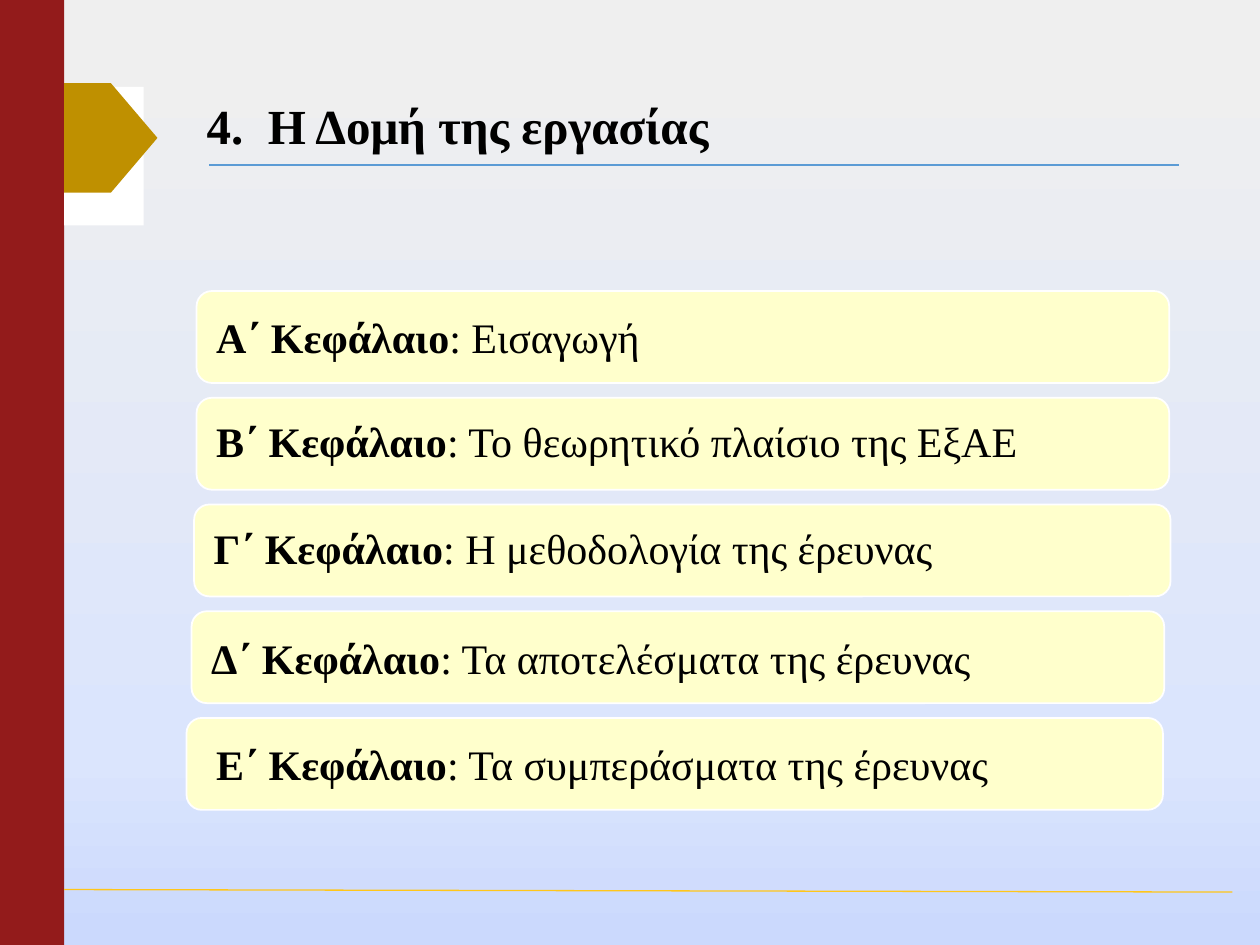
from copy import deepcopy
from dataclasses import dataclass

from pptx import Presentation
from pptx import util as u
from pptx.dml.color import RGBColor
from pptx.enum import shapes, text
from pptx.oxml import parse_xml
from pptx.oxml.ns import nsdecls, qn


@dataclass(frozen=True)
class Theme:
    font: str = "Times New Roman"
    title_size: int = 28
    body_size: int = 24
    ink: str = "000000"
    bar: str = "931B1B"
    arrow: str = "BF9000"
    white: str = "FFFFFF"
    card: str = "FFFFCC"
    title_rule: str = "5B9BD5"
    footer_rule: str = "FFC61A"
    backdrop: tuple = ((0.05, "EFEFEF"), (0.80, "DBE5FD"), (0.99, "CBD9FD"))


THEME = Theme()
WIDTH, HEIGHT = 10, 7.5
BAR_WIDTH = 0.51
CARD_TOP, CARD_PITCH, CARD_HEIGHT = 2.31, 0.847, 0.73

# Chapter, subject, left edge, width, tight line spacing, extra text indent
CHAPTERS = [
    ("Α΄ Κεφάλαιο", "Εισαγωγή", 1.56, 7.72, False, 0),
    ("Β΄ Κεφάλαιο", "Το θεωρητικό πλαίσιο της ΕξΑΕ", 1.56, 7.72, True, 0),
    ("Γ΄ Κεφάλαιο", "Η μεθοδολογία της έρευνας", 1.54, 7.75, True, 0),
    ("Δ΄ Κεφάλαιο", "Τα αποτελέσματα της έρευνας", 1.52, 7.72, False, 0),
    ("Ε΄ Κεφάλαιο", "Τα συμπεράσματα της έρευνας", 1.48, 7.75, False, 0.08),
]


def color(value):
    return RGBColor.from_string(value)


def inches(values):
    return [u.Inches(value) for value in values]


def style_font(font, size):
    font.name = THEME.font
    font.size = u.Pt(size)
    font.color.rgb = color(THEME.ink)


def add_block(slide, kind, box, fill, line=None):
    shape = slide.shapes.add_shape(kind, *inches(box))
    shape.shadow.inherit = False
    shape.fill.solid()
    shape.fill.fore_color.rgb = color(fill)
    if line:
        shape.line.color.rgb = color(line)
        shape.line.width = u.Pt(1)
    else:
        shape.line.fill.background()
    return shape


def add_rule(slide, ends, line):
    rule = slide.shapes.add_connector(shapes.MSO_CONNECTOR.STRAIGHT, *inches(ends))
    rule.line.color.rgb = color(line)
    rule.line.width = u.Pt(0.75)
    rule._element.spPr.append(parse_xml(f"<a:effectLst {nsdecls('a')}/>"))


def paint_background(slide):
    fill = slide.background.fill
    fill.gradient()
    fill.gradient_angle = 270
    # The default gradient has two stops; a third one is added
    stop_list = slide._element.find(".//" + qn("a:gsLst"))
    stop_list.append(deepcopy(stop_list[-1]))
    for stop, (position, value) in zip(fill.gradient_stops, THEME.backdrop):
        stop.position = position
        stop.color.rgb = color(value)


def add_frame(slide):
    kinds = shapes.MSO_SHAPE
    add_block(slide, kinds.RECTANGLE, (0, 0, BAR_WIDTH, HEIGHT), THEME.bar)
    add_rule(slide, (1.66, 1.31, 9.36, 1.31), THEME.title_rule)
    add_rule(slide, (BAR_WIDTH, 7.06, 9.78, 7.08), THEME.footer_rule)
    add_block(slide, kinds.RECTANGLE, (BAR_WIDTH, 0.69, 0.63, 1.1), THEME.white)
    add_block(slide, kinds.PENTAGON, (BAR_WIDTH, 0.66, 0.74, 0.87), THEME.arrow)


def set_title(slide, box, words):
    title = slide.shapes.title
    title.left, title.top, title.width, title.height = inches(box)
    frame = title.text_frame
    frame.text = words
    frame.vertical_anchor = text.MSO_ANCHOR.MIDDLE
    paragraph = frame.paragraphs[0]
    paragraph.alignment = text.PP_ALIGN.LEFT
    paragraph.line_spacing = 0.9
    style_font(paragraph.font, THEME.title_size)
    paragraph.font.bold = True


def add_card(slide, box, chapter, subject, tight, indent):
    card = add_block(slide, shapes.MSO_SHAPE.ROUNDED_RECTANGLE, box,
                     THEME.card, THEME.white)
    frame = card.text_frame
    frame.word_wrap = True
    frame.vertical_anchor = text.MSO_ANCHOR.MIDDLE
    frame.margin_left = u.Inches(0.12 + indent)
    frame.margin_right = frame.margin_top = frame.margin_bottom = u.Inches(0.12)
    paragraph = frame.paragraphs[0]
    paragraph.alignment = text.PP_ALIGN.LEFT
    if tight:
        paragraph.line_spacing = 0.9
        paragraph.space_after = u.Pt(2)
    style_font(paragraph.font, THEME.body_size)
    for words, bold in ((chapter, True), (": " + subject, False)):
        run = paragraph.add_run()
        run.text = words
        run.font.bold = bold


def add_chapters(slide):
    for row, (chapter, subject, left, width, tight, indent) in enumerate(CHAPTERS):
        box = (left, CARD_TOP + row * CARD_PITCH, width, CARD_HEIGHT)
        add_card(slide, box, chapter, subject, tight, indent)


def main():
    presentation = Presentation()
    presentation.slide_width, presentation.slide_height = inches((WIDTH, HEIGHT))
    slide = presentation.slides.add_slide(presentation.slide_layouts[5])
    paint_background(slide)
    add_frame(slide)
    set_title(slide, (1.54, 0.6, 7.87, 0.84), "4.  Η Δομή της εργασίας")
    add_chapters(slide)
    presentation.save("out.pptx")


if __name__ == "__main__":
    main()
